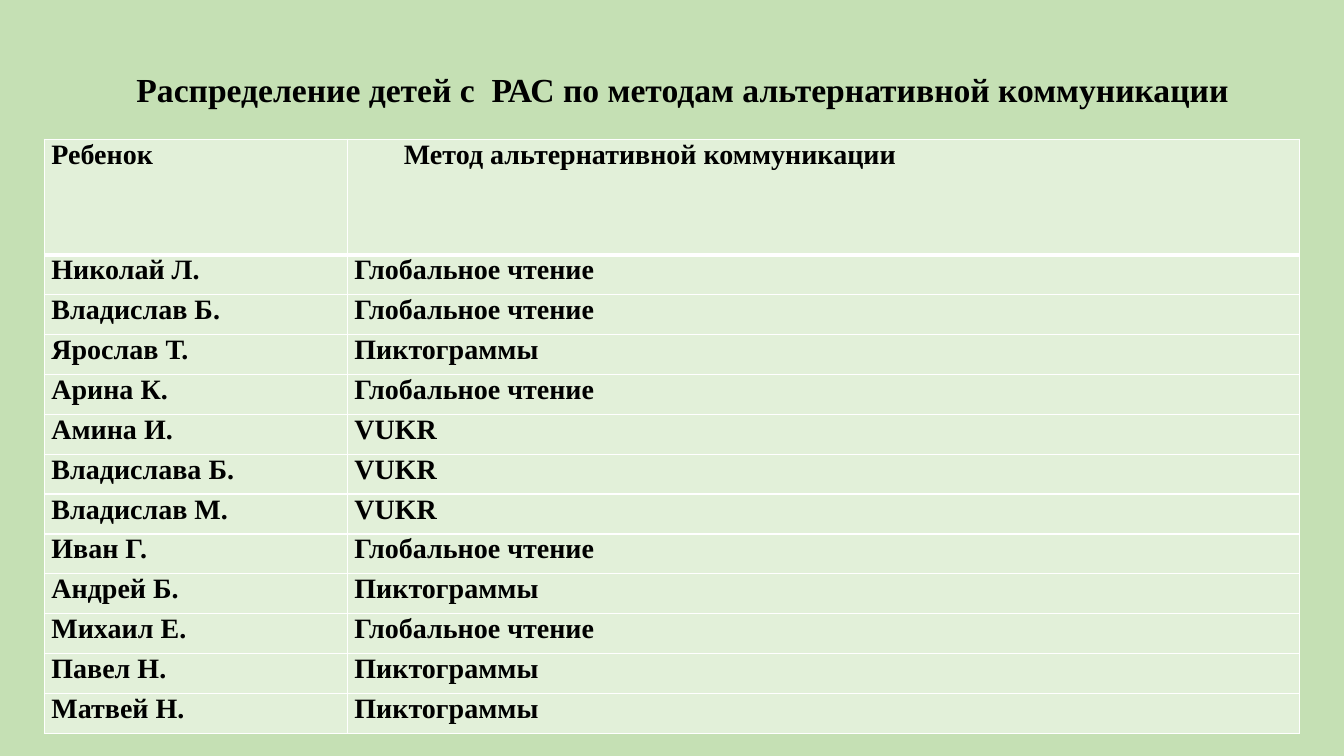
from lxml.etree import SubElement
from pptx import Presentation
from pptx.dml.color import RGBColor
from pptx.enum.text import MSO_ANCHOR, PP_ALIGN
from pptx.oxml.ns import qn
from pptx.util import Inches, Pt

COLORS = {"page": "C5E0B4", "cell": "E2F0D9", "line": "FFFFFF", "text": "000000"}
FONT = "Times New Roman"
INDENT = 0.49  # inches, first line

TITLE = "Распределение детей с  РАС по методам альтернативной коммуникации"
HEADER = ("Ребенок", "Метод альтернативной коммуникации")
READING, PICTOGRAMS, EXCHANGE = "Глобальное чтение", "Пиктограммы", "VUKR"
CHILDREN = [
    ("Николай Л.", READING),
    ("Владислав Б.", READING),
    ("Ярослав Т.", PICTOGRAMS),
    ("Арина К.", READING),
    ("Амина И.", EXCHANGE),
    ("Владислава Б.", EXCHANGE),
    ("Владислав М.", EXCHANGE),
    ("Иван Г.", READING),
    ("Андрей Б.", PICTOGRAMS),
    ("Михаил Е.", READING),
    ("Павел Н.", PICTOGRAMS),
    ("Матвей Н.", PICTOGRAMS),
]


def color(name):
    return RGBColor.from_string(COLORS[name])


def write(frame, text, size=20, align=PP_ALIGN.JUSTIFY, indent=0):
    """Put one formatted paragraph into a text frame."""
    para = frame.paragraphs[0]
    para.alignment = align
    properties = para._p.get_or_add_pPr()
    properties.set("marL", "0")
    properties.set("indent", str(Inches(indent)))
    span = para.add_run()
    span.text = text
    span.font.name = FONT
    span.font.size = Pt(size)
    span.font.bold = True
    span.font.color.rgb = color("text")


class Page:
    """A slide whose lengths are given in percent of its width and height."""

    def __init__(self, deck):
        self.deck = deck
        self.slide = deck.slides.add_slide(deck.slide_layouts[5])
        background = self.slide.background.fill
        background.solid()
        background.fore_color.rgb = color("page")

    def across(self, share):
        return round(self.deck.slide_width * share / 100)

    def down(self, share):
        return round(self.deck.slide_height * share / 100)

    def title(self, text, left, top, width, height):
        box = self.slide.shapes.title
        box.left, box.top = self.across(left), self.down(top)
        box.width, box.height = self.across(width), self.down(height)
        box.text_frame.word_wrap = True
        box.text_frame.vertical_anchor = MSO_ANCHOR.MIDDLE
        write(box.text_frame, text, size=24, align=PP_ALIGN.CENTER, indent=INDENT)

    def table(self, rows, left, top, columns, header_height, row_height):
        heights = [header_height] + [row_height] * (len(rows) - 1)
        table = self.slide.shapes.add_table(
            len(rows), len(columns), self.across(left), self.down(top),
            self.across(sum(columns)), self.down(sum(heights))).table
        for column, width in zip(table.columns, columns):
            column.width = self.across(width)
        for number, (row, height, texts) in enumerate(zip(table.rows, heights, rows)):
            row.height = self.down(height)
            for position, (cell, text) in enumerate(zip(row.cells, texts)):
                indented = number == 0 and position == 1
                self.cell(cell, text, INDENT if indented else 0,
                          top_line=3 if number == 1 else 1,
                          bottom_line=3 if number == 0 else 1)

    def cell(self, cell, text, indent, top_line, bottom_line):
        cell.margin_left = cell.margin_right = Inches(0.07)
        cell.margin_top = cell.margin_bottom = 0
        write(cell.text_frame, text, indent=indent)
        # Borders come before the fill in the cell properties
        properties = cell._tc.get_or_add_tcPr()
        for side, width in zip("LRTB", (1, 1, top_line, bottom_line)):
            line = SubElement(properties, qn(f"a:ln{side}"), w=str(Pt(width)))
            paint = SubElement(line, qn("a:solidFill"))
            SubElement(paint, qn("a:srgbClr"), val=COLORS["line"])
        cell.fill.solid()
        cell.fill.fore_color.rgb = color("cell")


def main():
    deck = Presentation()
    deck.slide_width, deck.slide_height = Inches(13.33), Inches(7.5)
    page = Page(deck)
    # Table of children and methods
    page.table([HEADER] + CHILDREN, left=3.3, top=18.4, columns=(22.55, 70.87),
               header_height=15.3, row_height=5.28)
    # Heading
    page.title(TITLE, left=3.3, top=8.45, width=91.3, height=6.7)
    deck.save("out.pptx")


if __name__ == "__main__":
    main()
